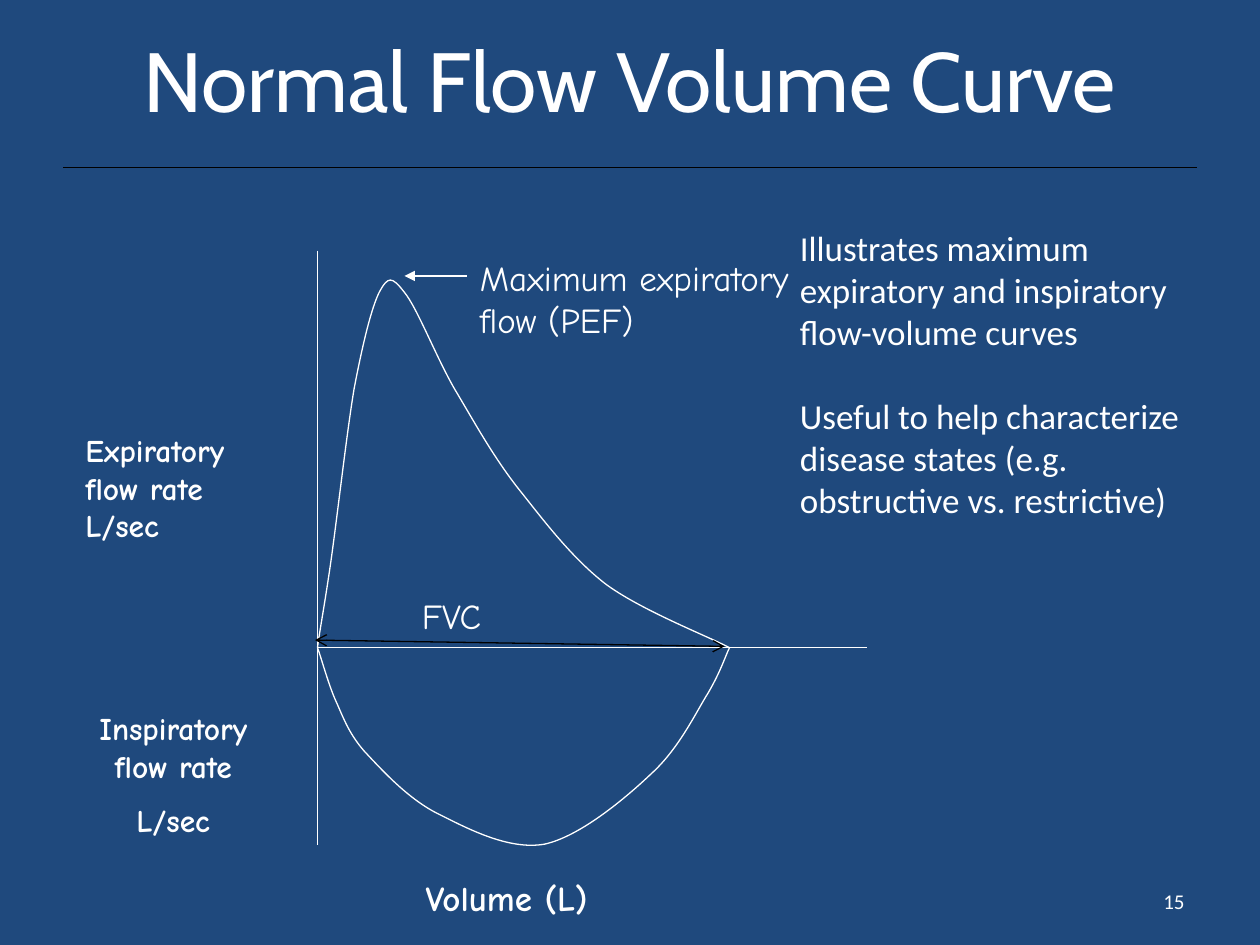
from lxml import etree
from pptx import Presentation
from pptx import util as u
from pptx.dml.color import RGBColor
from pptx.enum import shapes, text
from pptx.oxml.ns import qn

THEME = dict(
    bg="1F497D", ink="FFFFFF", rule="000000", line=0.75,
    title="Cabin", body="Calibri", hand="Comic Neue",
    sizes=dict(title=48, note=20, axis=18, number=12),
)
LEFT, CENTER, RIGHT = text.PP_ALIGN.LEFT, text.PP_ALIGN.CENTER, text.PP_ALIGN.RIGHT

# Text: paragraphs, box, font, size, options
TEXTS = [
    (["Normal Flow Volume Curve"], (0.5, 0, 9, 1.25), "title", "title",
     dict(align=CENTER, middle=True)),
    (["15"], (7.17, 6.95, 2.33, 0.4), "body", "number", dict(align=RIGHT, middle=True)),
    (["Expiratory flow rate", "L/sec"], (0.58, 3.37, 1.64, 1.18), "hand", "axis",
     dict(bold=True)),
    (["Volume (L)"], (3.28, 6.91, 2.22, 0.59), "hand", "note", dict(bold=True)),
    (["FVC"], (3.25, 4.67, 1.09, 0.59), "hand", "note", {}),
    (["Maximum expiratory flow (PEF)"], (3.71, 1.99, 2.78, 0.59), "hand", "note", {}),
    (["Inspiratory flow rate", "L/sec"], (0.5, 5.58, 1.75, 1.15), "hand", "axis",
     dict(bold=True, align=CENTER, gap=9)),
    (["Illustrates maximum expiratory and inspiratory flow-volume curves",
      "Useful to help characterize disease states (e.g. obstructive vs. restrictive)"],
     (6.25, 1.75, 3.42, 2.46), "body", "note", dict(gap=24)),
]

# Lines: start, end, colour, arrowheads
LINES = [
    ((2.52, 1.99), (2.52, 6.71), "ink", {}),  # flow axis
    ((2.52, 5.14), (6.88, 5.14), "ink", {}),  # volume axis
    ((3.21, 2.19), (3.71, 2.19), "ink", dict(headEnd="triangle")),  # peak pointer
    ((2.5, 5.08), (5.75, 5.13), "rule", dict(headEnd="arrow", tailEnd="arrow")),  # FVC
    ((0.5, 1.33), (9.5, 1.33), "rule", {}),  # title rule
]

# Curves: start point, then two controls and an end for each Bezier segment
EXPIRATORY = [
    (2.52, 5.14),
    (2.54, 4.99), (2.57, 4.84), (2.62, 4.5),
    (2.67, 4.16), (2.75, 3.45), (2.81, 3.09),
    (2.88, 2.72), (2.95, 2.44), (3.01, 2.32),
    (3.08, 2.19), (3.11, 2.19), (3.21, 2.32),
    (3.31, 2.44), (3.46, 2.83), (3.61, 3.09),
    (3.76, 3.34), (3.9, 3.6), (4.1, 3.86),
    (4.3, 4.11), (4.52, 4.41), (4.8, 4.63),
    (5.08, 4.84), (5.62, 5.05), (5.79, 5.14),
]
INSPIRATORY = [
    (5.79, 5.14),
    (5.76, 5.2), (5.72, 5.33), (5.62, 5.5),
    (5.52, 5.66), (5.39, 5.94), (5.17, 6.14),
    (4.96, 6.34), (4.6, 6.64), (4.32, 6.7),
    (4.03, 6.75), (3.7, 6.57), (3.46, 6.45),
    (3.23, 6.33), (3.03, 6.11), (2.89, 5.96),
    (2.76, 5.81), (2.72, 5.68), (2.66, 5.55),
    (2.6, 5.41), (2.55, 5.22), (2.52, 5.14),
]


def color(name):
    return RGBColor.from_string(THEME[name])


def style_line(sp, name):
    sp.line.color.rgb = color(name)
    sp.line.width = u.Pt(THEME["line"])


def add_text(s, paragraphs, box, font, size, align=LEFT, middle=False, bold=False, gap=0):
    tf = s.shapes.add_textbox(*map(u.Inches, box)).text_frame
    tf.word_wrap = True
    tf.vertical_anchor = text.MSO_ANCHOR.MIDDLE if middle else text.MSO_ANCHOR.TOP
    tf.text = "\n".join(paragraphs)
    for i, p in enumerate(tf.paragraphs):
        p.alignment = align
        p.space_before = u.Pt(gap if i else 0)
        for r in p.runs:
            r.font.name = THEME[font]
            r.font.size = u.Pt(THEME["sizes"][size])
            r.font.bold = bold
            r.font.color.rgb = color("ink")


def add_line(s, start, end, name, heads):
    sp = s.shapes.add_connector(shapes.MSO_CONNECTOR.STRAIGHT, *map(u.Inches, start + end))
    style_line(sp, name)
    ln = sp.line._get_or_add_ln()
    for tag, kind in heads.items():
        etree.SubElement(ln, qn("a:" + tag), type=kind)
    etree.SubElement(sp._element.spPr, qn("a:effectLst"))


def add_curve(s, points):
    start, *rest = [tuple(map(u.Inches, point)) for point in points]
    fb = s.shapes.build_freeform(*start)
    fb.add_line_segments(rest, close=False)
    sp = fb.convert_to_shape()
    # Join every three straight segments into one cubic Bezier
    segments = list(sp._element.iter(qn("a:lnTo")))
    for i in range(0, len(segments), 3):
        cubic = etree.Element(qn("a:cubicBezTo"))
        segments[i].addprevious(cubic)
        for segment in segments[i:i + 3]:
            cubic.append(segment[0])
            segment.getparent().remove(segment)
    sp.shadow.inherit = False
    sp.fill.background()
    style_line(sp, "ink")


def main():
    prs = Presentation()
    prs.slide_width, prs.slide_height = u.Inches(10), u.Inches(7.5)
    s = prs.slides.add_slide(prs.slide_layouts[6])
    s.background.fill.solid()
    s.background.fill.fore_color.rgb = color("bg")

    # Flow-volume loop
    for points in (EXPIRATORY, INSPIRATORY):
        add_curve(s, points)
    # Axes, arrows and rule
    for line in LINES:
        add_line(s, *line)
    # Title, labels and notes
    for *parts, options in TEXTS:
        add_text(s, *parts, **options)

    prs.save("out.pptx")


if __name__ == "__main__":
    main()
